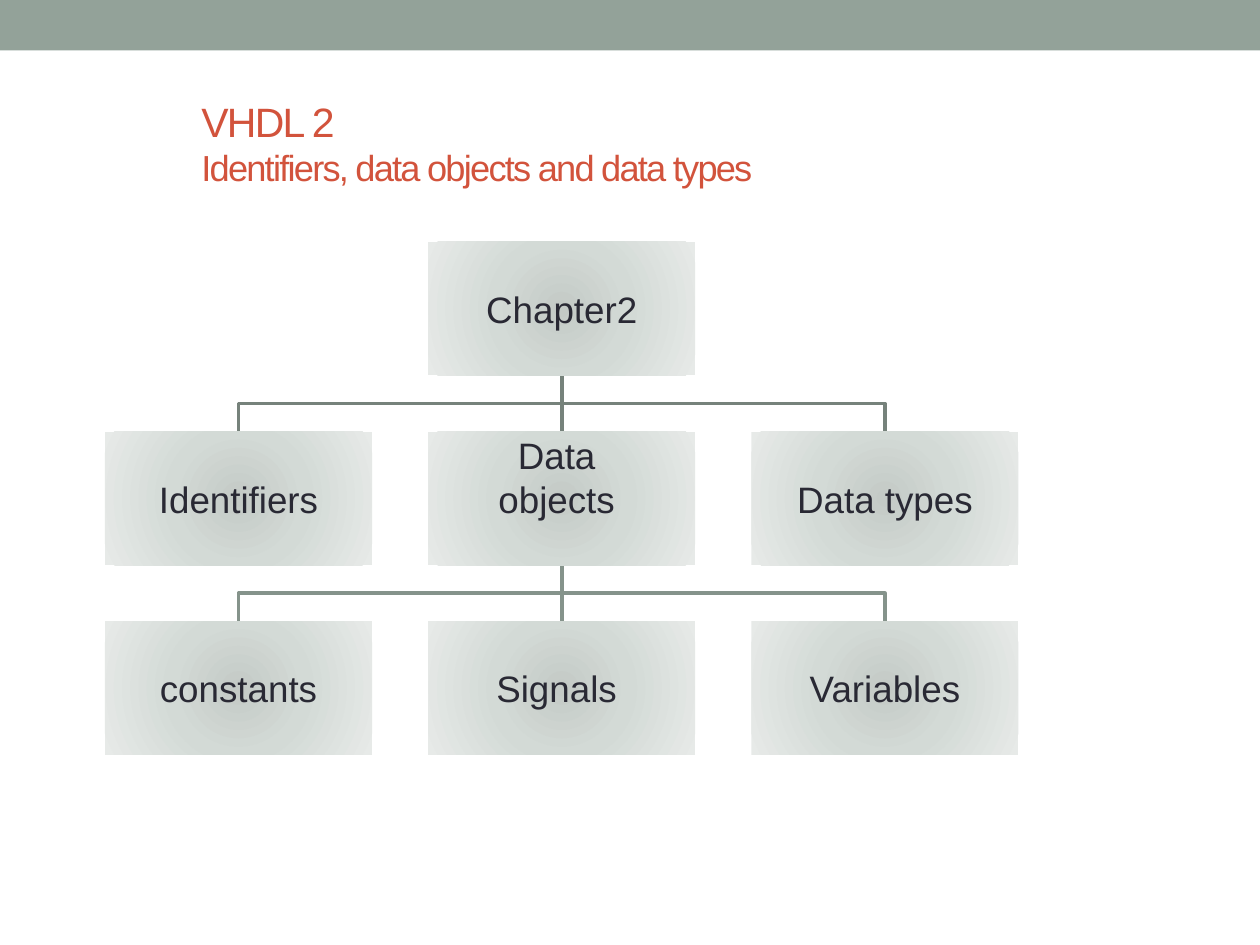
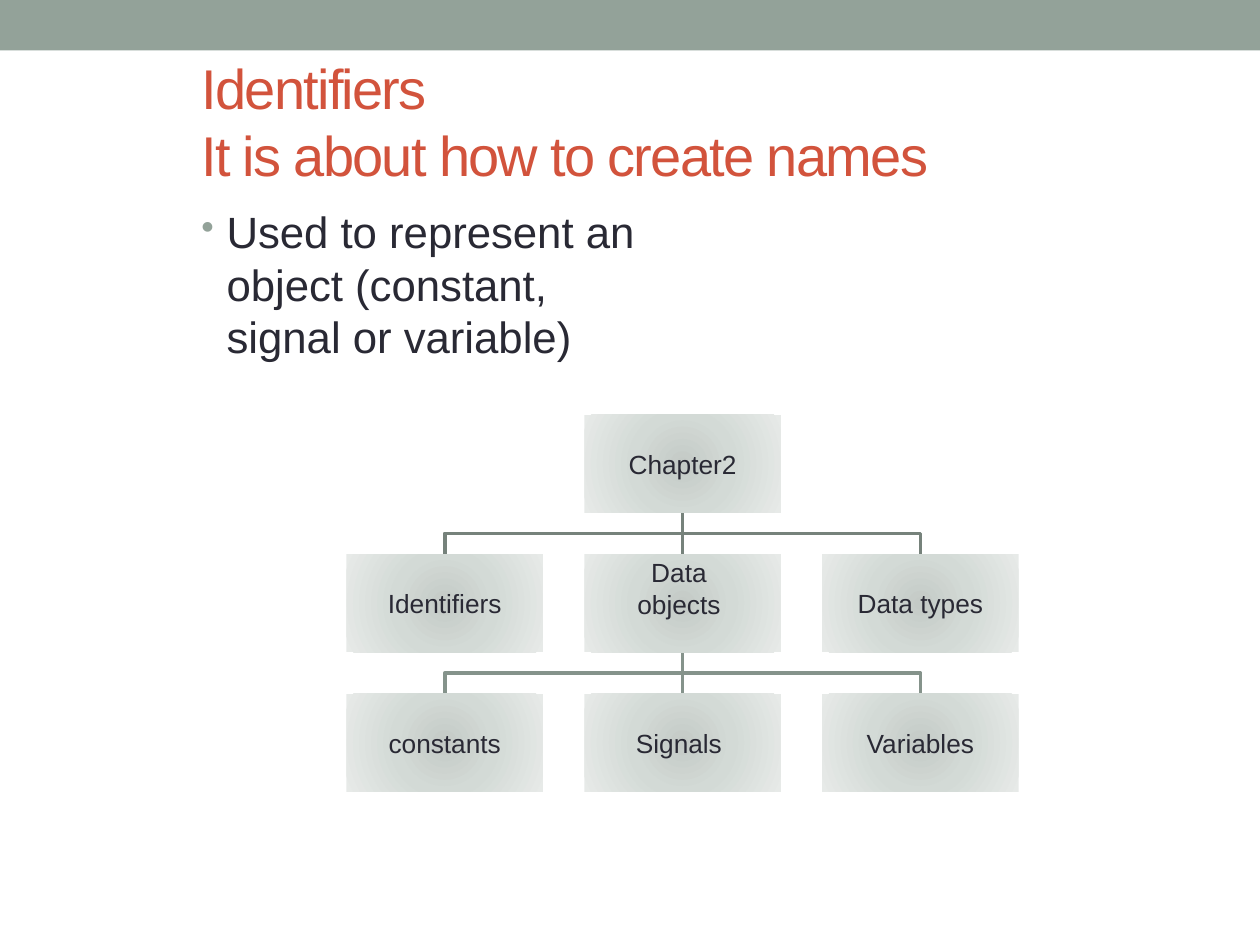
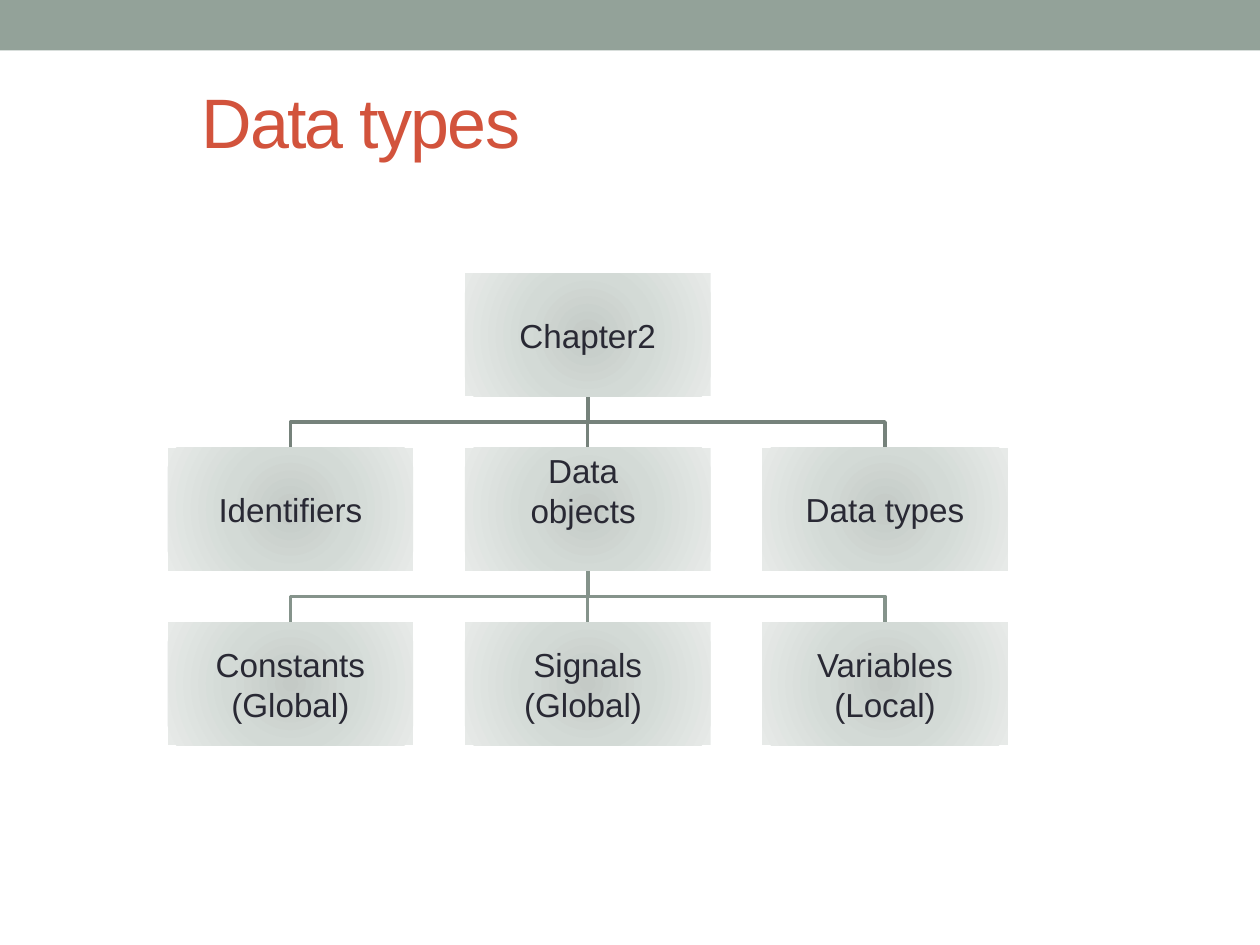
"""Build three VHDL chapter slides, each with an organisation tree."""
import itertools

import pptx
import pptx.dml.color
import pptx.enum.shapes
import pptx.enum.text
import pptx.oxml
import pptx.oxml.ns
import pptx.util

COLOURS = {
    "band": "93A299",
    "title": "D2533C",
    "text": "292934",
    "upper_line": "76827B",
    "lower_line": "85938B",
    "box_inner": "C4CAC6",
    "box_middle": "D3DAD6",
    "box_outer": "E7EAE8",
}
FONT = "Arial"
COLUMNS, ROWS = 100, 75
ALIGN = pptx.enum.text.PP_ALIGN
ANCHOR = pptx.enum.text.MSO_ANCHOR
RECT = pptx.enum.shapes.MSO_SHAPE.RECTANGLE
STRAIGHT = pptx.enum.shapes.MSO_CONNECTOR.STRAIGHT
NS = pptx.oxml.ns.nsdecls("a")
LINE_HEIGHT = 1.15


def rgb(name):
    """Return the named colour."""
    return pptx.dml.color.RGBColor.from_string(COLOURS[name])


def write(sp, text, sizes=(18,), colour="text", align=ALIGN.LEFT, anchor=ANCHOR.TOP,
          insets=(0.1, 0.05, 0.1, 0.05), tracking=None, bullet=False):
    """Write formatted text, cycling sizes over the runs of each paragraph."""
    tf = sp.text_frame
    tf.word_wrap = True
    tf.vertical_anchor = anchor
    tf.margin_left, tf.margin_top, tf.margin_right, tf.margin_bottom = map(pptx.util.Inches, insets)
    tf.text = text
    for p in tf.paragraphs:
        p.alignment = align
        for r, size in zip(p.runs, itertools.cycle(sizes)):
            r.font.name = FONT
            r.font.size = pptx.util.Pt(size)
            r.font.color.rgb = rgb(colour)
            if tracking:
                r._r.get_or_add_rPr().set("spc", str(round(tracking * 100)))
        if bullet:
            p.space_before = pptx.util.Pt(0.2 * sizes[0])
            pPr = p._p.get_or_add_pPr()
            indent = pptx.util.Inches(0.2)
            pPr.set("marL", str(indent))
            pPr.set("indent", str(-indent))
            for xml in (f'<a:buClr {NS}><a:srgbClr val="{COLOURS["band"]}"/></a:buClr>',
                        f'<a:buSzPct {NS} val="85000"/>',
                        f'<a:buChar {NS} char="•"/>'):
                pPr.append(pptx.oxml.parse_xml(xml))


class Deck:
    """Hold the presentation style and the current slide."""

    def __init__(self):
        """Open an empty deck of 10 by 7.5 inches."""
        self.prs = pptx.Presentation()
        self.prs.slide_width = pptx.util.Inches(10)
        self.prs.slide_height = pptx.util.Inches(7.5)
        self.s = None

    def x(self, columns):
        """Convert columns to a length."""
        return round(self.prs.slide_width * columns / COLUMNS)

    def y(self, rows):
        """Convert rows to a length."""
        return round(self.prs.slide_height * rows / ROWS)

    def area(self, left, top, width, height):
        """Convert a grid area to lengths."""
        return self.x(left), self.y(top), self.x(width), self.y(height)

    def rect(self, *area, colour="band"):
        """Add a plain rectangle."""
        sp = self.s.shapes.add_shape(RECT, *self.area(*area))
        sp.shadow.inherit = False
        sp.fill.solid()
        sp.fill.fore_color.rgb = rgb(colour)
        sp.line.fill.background()
        return sp

    def text(self, text, *area, **style):
        """Add a text box."""
        write(self.s.shapes.add_textbox(*self.area(*area)), text, **style)

    def slide(self, title, sizes, top=3.3, bottom_inset=0.05):
        """Start a slide with the band and its title."""
        self.s = self.prs.slides.add_slide(self.prs.slide_layouts[6])
        self.rect(0, 0, COLUMNS, 4)
        self.text(title, 15, top, 80, 12.5, sizes=sizes, colour="title", anchor=ANCHOR.MIDDLE,
                  tracking=-1, insets=(0.1, 0.05, 0.1, bottom_inset))

    def node(self, text, *area, size, raised=False):
        """Add a tree box with a radial gradient; raised text sits one half line higher."""
        sp = self.rect(*area)
        stops = "".join(
            f'<a:gs pos="{pos}"><a:srgbClr val="{COLOURS[name]}"/></a:gs>'
            for pos, name in ((0, "box_inner"), (45000, "box_middle"), (100000, "box_outer")))
        spPr = sp._element.spPr
        spPr.replace(spPr.find(pptx.oxml.ns.qn("a:solidFill")), pptx.oxml.parse_xml(
            f'<a:gradFill {NS} rotWithShape="1"><a:gsLst>{stops}</a:gsLst><a:path path="circle">'
            '<a:fillToRect l="100000" t="100000" r="100000" b="100000"/></a:path></a:gradFill>'))
        bottom = 0.01 + (size * LINE_HEIGHT / 72 if raised else 0)
        write(sp, text, sizes=(size,), align=ALIGN.CENTER, anchor=ANCHOR.MIDDLE,
              insets=(0.01, 0.01, 0.01, bottom))

    def branch(self, start, end, colour):
        """Join two points, with an elbow halfway down if they are not in line."""
        (x1, y1), (x2, y2) = [(self.x(x), self.y(y)) for x, y in (start, end)]
        if x1 == x2:
            sp = self.s.shapes.add_connector(STRAIGHT, x1, y1, x2, y2)
            sp._element.spPr.append(pptx.oxml.parse_xml(f"<a:effectLst {NS}/>"))
        else:
            middle = (y1 + y2) // 2
            builder = self.s.shapes.build_freeform(x1, y1)
            builder.add_line_segments([(x1, middle), (x2, middle), (x2, y2)], close=False)
            sp = builder.convert_to_shape()
            sp.shadow.inherit = False
            sp.fill.background()
        sp.line.color.rgb = rgb(colour)
        sp.line.width = pptx.util.Pt(2.08)

    def tree(self, left, top, width, size, leaves):
        """Draw the chapter tree, with all gaps in proportion to the box width."""
        height = width / 2
        lefts = [left + 1.21 * width * i for i in range(3)]
        tops = [top + 0.71 * width * i for i in range(3)]
        centres = [x + width / 2 for x in lefts]
        for level, colour in enumerate(("upper_line", "lower_line")):
            for centre in centres:
                self.branch((centres[1], tops[level] + height), (centre, tops[level + 1]), colour)
        self.node("Chapter2", lefts[1], tops[0], width, height, size=size)
        for row, labels in zip(tops[1:], (("Identifiers", "Data \nobjects ", "Data types"), leaves)):
            for column, label in zip(lefts, labels):
                self.node(label, column, row, width, height, size=size,
                          raised=label.startswith("Data \n"))


def main():
    """Build and save the slides."""
    deck = Deck()
    leaves = ("constants", "Signals ", "Variables")

    deck.slide("VHDL 2\vIdentifiers, data objects and data types", (23.4, 20.7),
               top=6.7, bottom_inset=0.38)
    deck.tree(8.33, 19.2, 21.2, 21, leaves)

    deck.slide("Identifiers \vIt is about how to create names", (32,))
    deck.text("Used to represent an object (constant, signal or variable)",
              15, 15.8, 39.3, 45, sizes=(25,), bullet=True)
    deck.tree(27.5, 32.9, 15.6, 15, leaves)

    deck.slide("Data types", (40,))
    deck.tree(13.3, 21.7, 19.5, 19,
              ("Constants\n(Global)", "Signals\n(Global) ", "Variables\n(Local)"))

    deck.prs.save("out.pptx")


if __name__ == "__main__":
    main()
